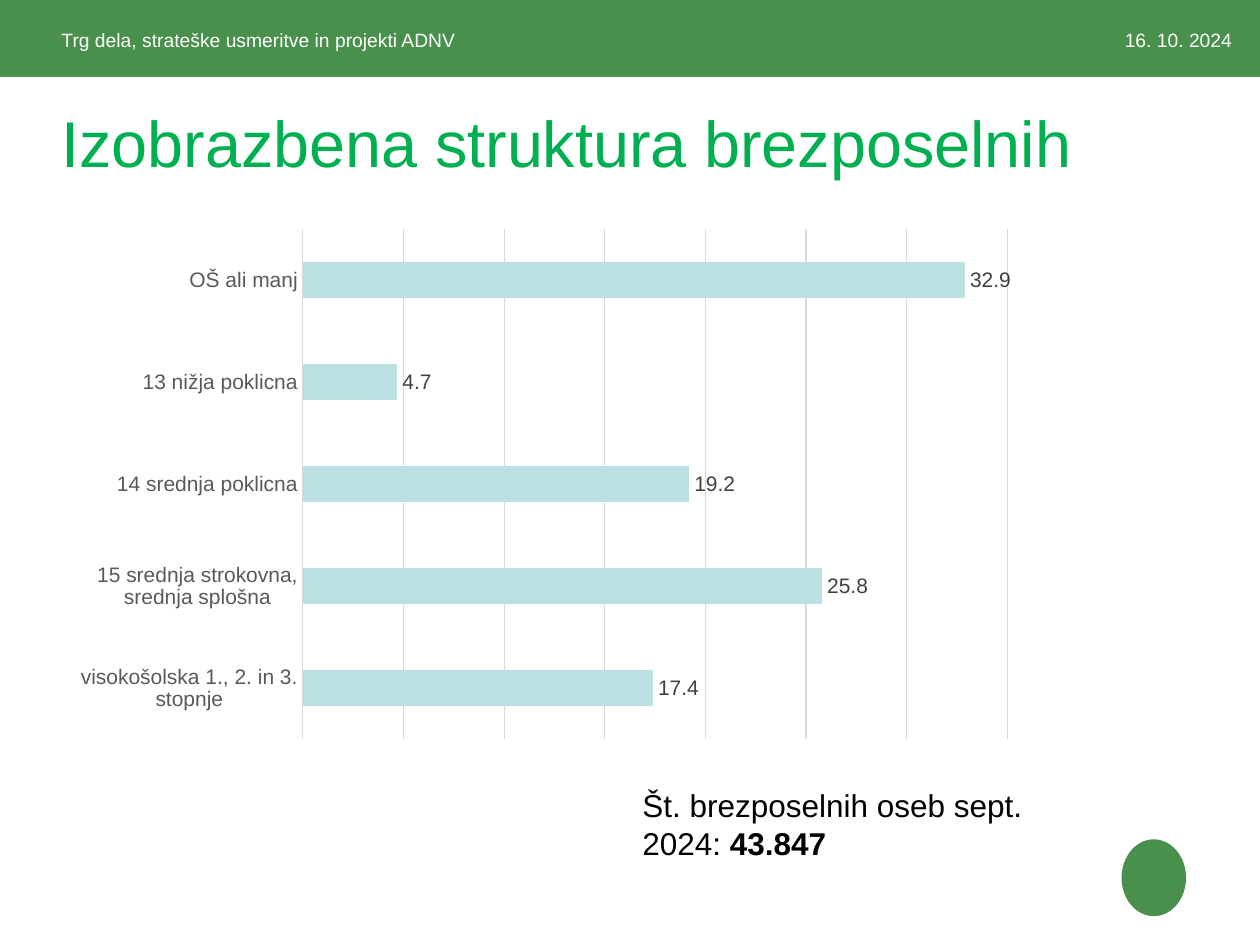
from dataclasses import dataclass

from lxml.etree import SubElement
from pptx import Presentation
from pptx.chart.data import CategoryChartData
from pptx.dml.color import RGBColor
from pptx.enum.chart import XL_CHART_TYPE as ChartType
from pptx.enum.chart import XL_LABEL_POSITION as LabelPosition
from pptx.enum.chart import XL_TICK_LABEL_POSITION as TickLabels
from pptx.enum.chart import XL_TICK_MARK as TickMark
from pptx.enum.shapes import MSO_SHAPE as ShapeType
from pptx.enum.text import MSO_ANCHOR as Anchor
from pptx.enum.text import MSO_AUTO_SIZE as AutoSize
from pptx.enum.text import PP_ALIGN as Align
from pptx.oxml.ns import qn
from pptx.util import Cm, Pt

FONT = "Arial"
COLORS = {
    "band": "49904D",
    "title": "00B050",
    "bar": "BBE0E3",
    "grid": "D9D9D9",
    "axis_text": "595959",
    "label_text": "404040",
    "white": "FFFFFF",
    "black": "000000",
}
EDUCATION_SHARES = {
    "OŠ ali manj": 32.9,
    "13 nižja poklicna": 4.7,
    "14 srednja poklicna": 19.2,
    "15 srednja strokovna, srednja splošna": 25.8,
    "visokošolska 1., 2. in 3. stopnje": 17.4,
}
# Plot area as fractions of the chart frame
PLOT_LAYOUT = {"x": 0.25, "y": 0.02, "w": 0.73, "h": 0.96}


@dataclass
class Box:
    left: float
    top: float
    width: float
    height: float

    def lengths(self) -> tuple:
        return Cm(self.left), Cm(self.top), Cm(self.width), Cm(self.height)


@dataclass
class HeaderText:
    text: str
    box: Box
    align: Align


HEADER_TEXTS = [
    HeaderText("Trg dela, strateške usmeritve in projekti ADNV",
               Box(1.24, 0.57, 11.46, 0.61), Align.LEFT),
    HeaderText("16. 10. 2024", Box(17.7, 0.57, 7.14, 0.76), Align.RIGHT),
]


def color(name: str) -> RGBColor:
    return RGBColor.from_string(COLORS[name])


def style_font(font, size: float, color_name: str) -> None:
    font.name = FONT
    font.size = Pt(size)
    font.color.rgb = color(color_name)


def clear_margins(text_frame) -> None:
    text_frame.margin_left = text_frame.margin_right = 0
    text_frame.margin_top = text_frame.margin_bottom = 0


def add_plain_shape(slide, shape_type: ShapeType, box: Box) -> None:
    shape = slide.shapes.add_shape(shape_type, *box.lengths())
    shape.shadow.inherit = False
    shape.fill.solid()
    shape.fill.fore_color.rgb = color("band")
    shape.line.fill.background()


def add_header_text(slide, header: HeaderText) -> None:
    text_frame = slide.shapes.add_textbox(*header.box.lengths()).text_frame
    text_frame.word_wrap = True
    clear_margins(text_frame)
    paragraph = text_frame.paragraphs[0]
    paragraph.text = header.text
    paragraph.alignment = header.align
    style_font(paragraph.runs[0].font, 11, "white")


def set_title(slide, text: str, box: Box) -> None:
    title = slide.shapes.title
    title.left, title.top, title.width, title.height = box.lengths()
    text_frame = title.text_frame
    text_frame.text = text
    text_frame.auto_size = AutoSize.NONE
    text_frame.vertical_anchor = Anchor.TOP
    clear_margins(text_frame)
    paragraph = text_frame.paragraphs[0]
    paragraph.alignment = Align.LEFT
    style_font(paragraph.runs[0].font, 37, "title")


def set_plot_layout(chart) -> None:
    plot_area = chart._chartSpace.chart.plotArea
    for old_layout in plot_area.findall(qn("c:layout")):
        plot_area.remove(old_layout)
    layout = SubElement(plot_area, qn("c:layout"))
    plot_area.insert(0, layout)
    manual = SubElement(layout, qn("c:manualLayout"))
    settings = {"layoutTarget": "inner", "xMode": "edge", "yMode": "edge", **PLOT_LAYOUT}
    for tag, value in settings.items():
        SubElement(manual, qn(f"c:{tag}")).set("val", str(value))


def add_education_chart(slide, box: Box) -> None:
    data = CategoryChartData(number_format="0.0")
    data.categories = list(EDUCATION_SHARES)
    data.add_series("Series 1", list(EDUCATION_SHARES.values()))
    chart = slide.shapes.add_chart(ChartType.BAR_CLUSTERED, *box.lengths(), data).chart
    chart.has_legend = False
    chart.has_title = False
    style_font(chart.font, 10, "black")
    set_plot_layout(chart)

    # Axes
    category_axis, value_axis = chart.category_axis, chart.value_axis
    for axis in (category_axis, value_axis):
        axis.major_tick_mark = axis.minor_tick_mark = TickMark.NONE
        style_font(axis.tick_labels.font, 12, "axis_text")
    category_axis.reverse_order = True
    value_axis.minimum_scale, value_axis.maximum_scale = 0, 35
    value_axis.major_unit = 5
    value_axis.tick_label_position = TickLabels.NONE
    value_axis.format.line.fill.background()
    value_axis.has_major_gridlines = True
    for line in (category_axis.format.line, value_axis.major_gridlines.format.line):
        line.color.rgb = color("grid")
        line.width = Pt(0.75)

    # Bars and their values
    plot = chart.plots[0]
    plot.gap_width = 182
    plot.vary_by_categories = False
    fill = plot.series[0].format.fill
    fill.solid()
    fill.fore_color.rgb = color("bar")
    labels = plot.series[0].data_labels
    labels.show_value = True
    labels.number_format = "0.0"
    labels.number_format_is_linked = False
    labels.position = LabelPosition.OUTSIDE_END
    style_font(labels.font, 12, "label_text")


def add_total(slide, caption: str, total: str, box: Box) -> None:
    text_frame = slide.shapes.add_textbox(*box.lengths()).text_frame
    text_frame.word_wrap = True
    paragraph = text_frame.paragraphs[0]
    paragraph.text = caption
    paragraph.add_run().text = total
    for run in paragraph.runs:
        style_font(run.font, 18, "black")
    paragraph.runs[-1].font.bold = True


def main() -> None:
    presentation = Presentation()
    presentation.slide_width, presentation.slide_height = Cm(25.4), Cm(19.05)
    slide = presentation.slides.add_slide(presentation.slide_layouts[5])

    # Header band and emblem
    add_plain_shape(slide, ShapeType.RECTANGLE, Box(0, 0, 25.4, 1.55))
    add_plain_shape(slide, ShapeType.OVAL, Box(22.61, 16.92, 1.3, 1.55))

    # Title, chart and total
    set_title(slide, "Izobrazbena struktura brezposelnih", Box(1.24, 2.08, 23.52, 1.8))
    for header in HEADER_TEXTS:
        add_header_text(slide, header)
    add_education_chart(slide, Box(1.24, 4.4, 19.46, 10.72))
    add_total(slide, "Št. brezposelnih oseb sept. 2024: ", "43.847",
              Box(12.7, 15.72, 9.2, 1.8))

    presentation.save("out.pptx")


if __name__ == "__main__":
    main()
